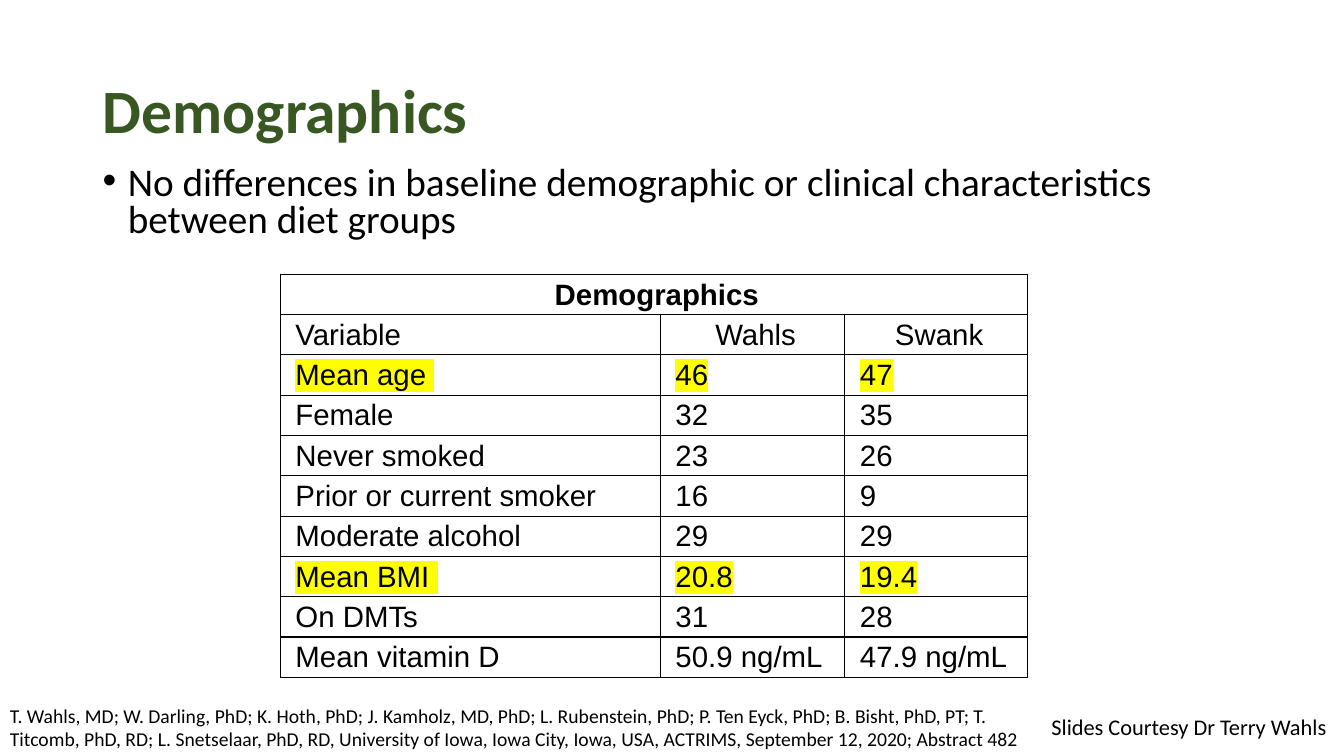
from lxml.etree import SubElement, Element
from pptx import Presentation
from pptx.dml.color import RGBColor
from pptx.enum.text import MSO_ANCHOR, MSO_AUTO_SIZE, PP_ALIGN
from pptx.oxml.ns import qn
from pptx.util import Inches, Pt

GREEN = RGBColor(0x38, 0x57, 0x23)
BLACK = RGBColor(0, 0, 0)
YELLOW = RGBColor(0xFF, 0xFF, 0)

HEAD = "Demographics"
POINT = ("No differences in baseline demographic or clinical characteristics "
         "between diet groups")
CREDIT = "Slides Courtesy Dr Terry Wahls"
SOURCE = ("T. Wahls, MD; W. Darling, PhD; K. Hoth, PhD; J. Kamholz, MD, PhD; "
          "L. Rubenstein, PhD; P. Ten Eyck, PhD; B. Bisht, PhD, PT; "
          "T. Titcomb, PhD, RD; L. Snetselaar, PhD, RD, University of Iowa, "
          "Iowa City, Iowa, USA, ACTRIMS, September 12, 2020; Abstract 482")
ROWS = [
    ("Demographics ", "", ""),
    ("Variable", "Wahls ", "Swank "),
    ("Mean age ", "46", "47"),
    ("Female", "32", "35"),
    ("Never smoked", "23", "26"),
    ("Prior or current smoker", "16", "9"),
    ("Moderate alcohol", "29", "29"),
    ("Mean BMI ", "20.8", "19.4"),
    ("On DMTs", "31", "28"),
    ("Mean vitamin D", "50.9 ng/mL", "47.9 ng/mL"),
]
MARKED = ("Mean age ", "Mean BMI ")
WIDTHS = (3.77, 1.83, 1.81)


def write(frame, text, size, font="Calibri", color=BLACK, bold=False,
          align=PP_ALIGN.LEFT, line=None, mark=None):
    para = frame.paragraphs[0]
    para.alignment = align
    if line:
        para.line_spacing = line
    run = para.add_run()
    run.text = text
    run.font.size = Pt(size)
    run.font.bold = bold
    run.font.color.rgb = color
    run.font.name = font
    if mark:
        glow = Element(qn("a:highlight"))
        SubElement(glow, qn("a:srgbClr"), val=str(mark))
        run.font.fill
        run.font._element.find(qn("a:solidFill")).addnext(glow)
    return para


def place(shape, box):
    shape.left, shape.top, shape.width, shape.height = map(Inches, box)


def add_title(slide, box):
    title = slide.shapes.title
    place(title, box)
    frame = title.text_frame
    frame.auto_size = MSO_AUTO_SIZE.NONE
    frame.vertical_anchor = MSO_ANCHOR.MIDDLE
    write(frame, HEAD, 44, color=GREEN, bold=True, line=0.9)


def add_text(slide, box, text, size, **style):
    frame = slide.shapes.add_textbox(*map(Inches, box)).text_frame
    frame.word_wrap = True
    return write(frame, text, size, **style)


def add_point(slide, box):
    para = add_text(slide, box, POINT, 28, line=0.8)
    para.space_before = Pt(10)
    props = para._p.get_or_add_pPr()
    props.set("marL", str(Inches(0.25)))
    props.set("indent", str(Inches(-0.25)))
    SubElement(props, qn("a:buFont"), typeface="Arial")
    SubElement(props, qn("a:buChar"), char="•")


def add_edges(cell):
    props = cell._tc.get_or_add_tcPr()
    for spot, side in enumerate("LRTB"):
        edge = Element(qn("a:ln" + side), w=str(Pt(1)))
        fill = SubElement(edge, qn("a:solidFill"))
        SubElement(fill, qn("a:srgbClr"), val=str(BLACK))
        props.insert(spot, edge)


def add_grid(slide, box):
    grid = slide.shapes.add_table(len(ROWS), len(WIDTHS),
                                  *map(Inches, box)).table
    grid.first_row = grid.horz_banding = False
    for col, width in zip(grid.columns, WIDTHS):
        col.width = Inches(width)
    for row in grid.rows:
        row.height = Inches(box[3] / len(ROWS))
    grid.cell(0, 0).merge(grid.cell(0, len(WIDTHS) - 1))
    for r, row in enumerate(ROWS):
        for c, text in enumerate(row):
            cell = grid.cell(r, c)
            cell.fill.background()
            add_edges(cell)
            cell.vertical_anchor = MSO_ANCHOR.MIDDLE
            cell.margin_left = Inches(0.15)
            cell.margin_top = cell.margin_right = Inches(0.01)
            cell.margin_bottom = 0
            if text:
                mid = r == 0 or (r == 1 and c > 0)
                write(cell.text_frame, text, 21, font="Arial", bold=r == 0,
                      align=PP_ALIGN.CENTER if mid else PP_ALIGN.LEFT,
                      mark=YELLOW if row[0] in MARKED else None)


def main():
    deck = Presentation()
    deck.slide_width, deck.slide_height = Inches(13.33), Inches(7.5)
    slide = deck.slides.add_slide(deck.slide_layouts[5])
    add_title(slide, (0.92, 0.4, 11.5, 1.45))
    add_point(slide, (0.92, 1.6, 11.5, 0.86))
    add_grid(slide, (2.78, 2.72, sum(WIDTHS), 4))
    add_text(slide, (10.33, 7.03, 3, 0.37), CREDIT, 16)
    add_text(slide, (0, 6.93, 10.29, 0.57), SOURCE, 14)
    deck.save("out.pptx")


if __name__ == "__main__":
    main()
